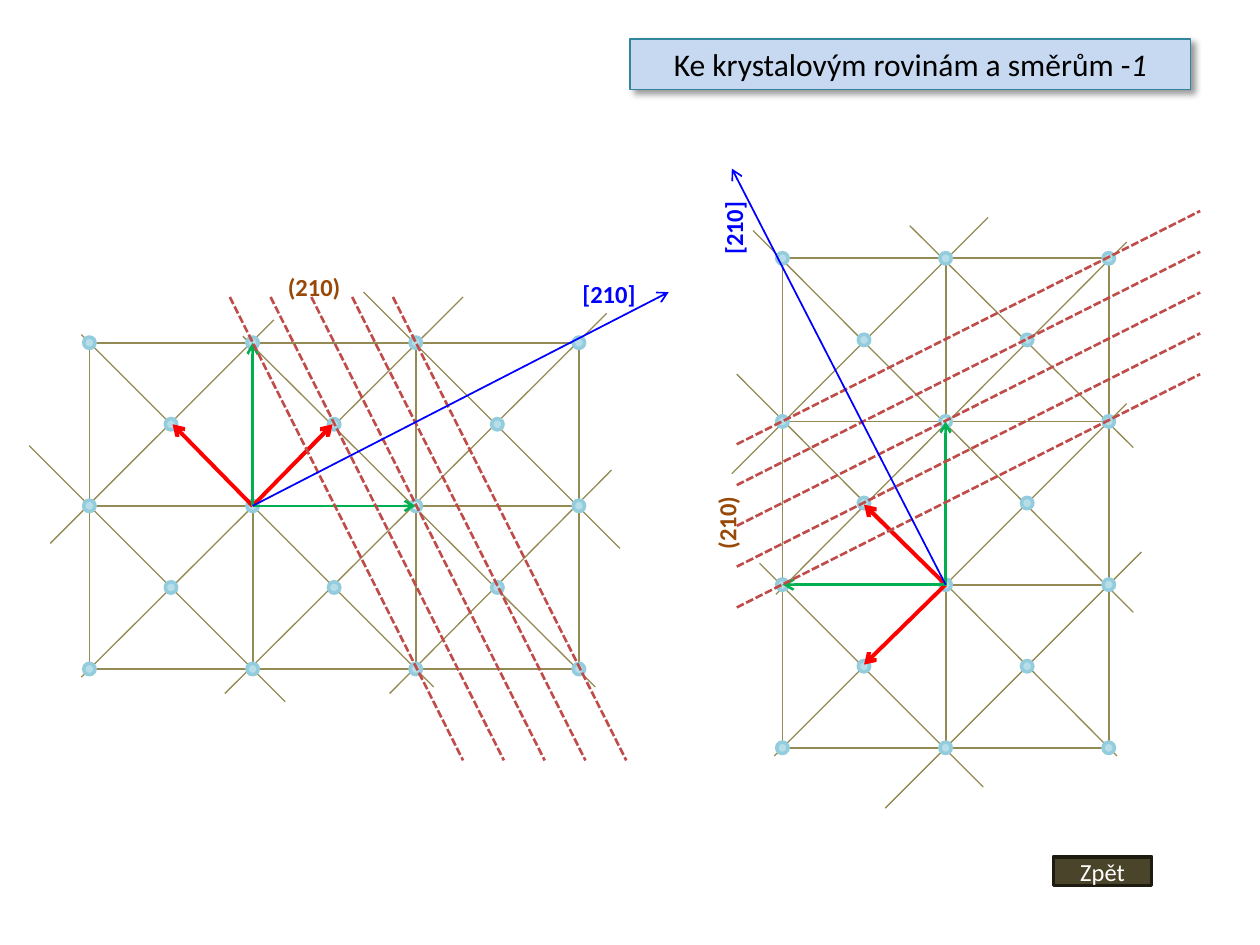
from itertools import product

from lxml.etree import SubElement
from pptx import Presentation
from pptx.dml.color import RGBColor
from pptx.enum.dml import MSO_LINE
from pptx.enum.shapes import MSO_CONNECTOR, MSO_SHAPE
from pptx.enum.text import MSO_ANCHOR, MSO_AUTO_SIZE, PP_ALIGN
from pptx.oxml.ns import qn
from pptx.util import Inches, Pt

OLIVE = RGBColor(0x94, 0x8A, 0x54)
ATOM_FILL = RGBColor(0xB7, 0xDE, 0xE8)
ATOM_PALE = RGBColor(0xDB, 0xEE, 0xF4)
ATOM_EDGE = RGBColor(0x93, 0xCD, 0xDD)
RED = RGBColor(0xFF, 0x00, 0x00)
GREEN = RGBColor(0x00, 0xB0, 0x50)
PLANE_RED = RGBColor(0xBF, 0x4C, 0x48)
BLUE = RGBColor(0x00, 0x00, 0xFF)
BROWN = RGBColor(0x98, 0x48, 0x07)
BUTTON_FILL = RGBColor(0x4A, 0x45, 0x2A)
BUTTON_EDGE = RGBColor(0x1E, 0x1C, 0x11)
TITLE_FILL = RGBColor(0xC6, 0xD9, 0xF1)
TITLE_EDGE = RGBColor(0x31, 0x85, 0x9C)
BLACK = RGBColor(0x00, 0x00, 0x00)
WHITE = RGBColor(0xFF, 0xFF, 0xFF)

GRID = Inches(0.1)
COLUMNS, ROWS = 100, 75
CELLS_LONG, CELLS_SHORT = 3, 2
ATOM_SIZE = 0.07

DIAGONALS = [
    ((-0.05, -0.05), (2.11, 2.11)),
    ((0.94, -0.04), (3.1, 2.11)),
    ((-0.37, 0.63), (1.2, 2.2)),
    ((1.68, -0.31), (3.25, 1.26)),
    ((-0.05, 2.05), (2.29, -0.28)),
    ((0.83, 2.15), (3.17, -0.18)),
    ((1.84, 2.15), (3.2, 0.78)),
    ((-0.24, 1.23), (1.13, -0.14)),
]
ORIGIN = (1, 1)
VECTORS = [
    ((0.51, 0.5), RED, 2.25),
    ((1.49, 0.5), RED, 2.25),
    ((1, 0), GREEN, 1.5),
    ((2, 1), GREEN, 1.5),
]
PLANE_START, PLANE_STEP, PLANE_RUN = 0.86, 0.25, 1.43
PLANE_TOP, PLANE_BOTTOM, PLANE_COUNT = -0.28, 2.56, 5
DIRECTION_END = (3.55, -0.31)
LABELS = [
    ("(210)", (1.44, -0.34), 0.6, BROWN),
    ("[210]", (3.2, -0.3), 0.51, BLUE),
]
LABEL_HEIGHT = 0.26


def apply_format(target, values):
    for name, value in values.items():
        setattr(target, name, value)


def style_shape(shape, fill, edge, width):
    shape.shadow.inherit = False
    if fill is None:
        shape.fill.background()
    else:
        shape.fill.solid()
        shape.fill.fore_color.rgb = fill
    shape.line.color.rgb = edge
    shape.line.width = Pt(width)


def write_run(paragraph, text, size, color, **extra):
    run = paragraph.add_run()
    run.text = text
    apply_format(run.font, {"name": "Calibri", "size": Pt(size), **extra})
    run.font.color.rgb = color


def add_line(shapes, start, end, color, width, dash=None, arrow=False):
    connector = shapes.add_connector(MSO_CONNECTOR.STRAIGHT, *start, *end)
    connector.line.color.rgb = color
    apply_format(connector.line, {"width": Pt(width), "dash_style": dash})
    properties = connector._element.spPr
    if arrow:
        SubElement(properties.find(qn("a:ln")), qn("a:tailEnd"), type="arrow")
    SubElement(properties, qn("a:effectLst"))


def draw_lattice(slide, box, turned):
    left, top, width, height = box
    cell = (height if turned else width) / CELLS_LONG
    rotation = 270 if turned else 0
    shapes = slide.shapes.add_group_shape().shapes

    def point(position):
        along, across = position
        if turned:
            return round(left + across * cell), round(top + height - along * cell)
        return round(left + along * cell), round(top + across * cell)

    def centred(position, columns, rows):
        x, y = point(position)
        w, h = round(columns * cell), round(rows * cell)
        return x - w // 2, y - h // 2, w, h

    corners = list(product(range(CELLS_LONG + 1), range(CELLS_SHORT + 1)))
    centres = [(along + 0.5, across + 0.5)
               for along, across in product(range(CELLS_LONG), range(CELLS_SHORT))]

    for centre in centres:
        tile = shapes.add_shape(MSO_SHAPE.RECTANGLE, *centred(centre, 1, 1))
        tile.rotation = rotation
        style_shape(tile, None, OLIVE, 1)

    for start, end in DIAGONALS:
        add_line(shapes, point(start), point(end), OLIVE, 0.75)

    for position in corners + centres:
        atom = shapes.add_shape(MSO_SHAPE.OVAL, *centred(position, ATOM_SIZE, ATOM_SIZE))
        atom.rotation = rotation
        style_shape(atom, ATOM_PALE if position == (2, 1) else ATOM_FILL, ATOM_EDGE, 2)

    for end, color, weight in VECTORS:
        add_line(shapes, point(ORIGIN), point(end), color, weight, arrow=True)

    for index in range(PLANE_COUNT):
        along = PLANE_START + index * PLANE_STEP
        add_line(shapes, point((along, PLANE_TOP)), point((along + PLANE_RUN, PLANE_BOTTOM)),
                 PLANE_RED, 1.5, dash=MSO_LINE.SQUARE_DOT)

    add_line(shapes, point(ORIGIN), point(DIRECTION_END), BLUE, 1, arrow=True)

    for text, position, columns, color in LABELS:
        label = shapes.add_textbox(*centred(position, columns, LABEL_HEIGHT))
        label.rotation = rotation
        apply_format(label.text_frame, {"word_wrap": True,
                                        "auto_size": MSO_AUTO_SIZE.SHAPE_TO_FIT_TEXT})
        write_run(label.text_frame.paragraphs[0], text, 14, color, bold=True)


def draw_panel(slide, box, kind, colors, width, runs):
    panel = slide.shapes.add_shape(kind, *box)
    style_shape(panel, *colors, width)
    apply_format(panel.text_frame, {"word_wrap": True, "vertical_anchor": MSO_ANCHOR.MIDDLE})
    paragraph = panel.text_frame.paragraphs[0]
    paragraph.alignment = PP_ALIGN.CENTER
    for text, size, color, extra in runs:
        write_run(paragraph, text, size, color, **extra)
    return panel


def draw_title(slide, box):
    title = draw_panel(slide, box, MSO_SHAPE.RECTANGLE, (TITLE_FILL, TITLE_EDGE), 0.75,
                       [("Ke krystalovým rovinám a směrům -", 18, BLACK, {}),
                        ("1", 18, BLACK, {"italic": True})])
    effects = title._element.spPr.find(qn("a:effectLst"))
    shadow = SubElement(effects, qn("a:outerShdw"), blurRad=str(Pt(4)), dist=str(Pt(3)),
                        dir=str(45 * 60000), algn="tl", rotWithShape="0")
    color = SubElement(shadow, qn("a:srgbClr"), val=str(BLACK))
    SubElement(color, qn("a:alpha"), val="40000")


def draw_button(slide, box):
    draw_panel(slide, box, MSO_SHAPE.ACTION_BUTTON_CUSTOM, (BUTTON_FILL, BUTTON_EDGE), 2,
               [("Zpět", 14, WHITE, {})])


def grid_box(*cells):
    return [round(count * GRID) for count in cells]


def main():
    presentation = Presentation()
    apply_format(presentation, {"slide_width": COLUMNS * GRID, "slide_height": ROWS * GRID})
    slide = presentation.slides.add_slide(presentation.slide_layouts[6])
    draw_lattice(slide, grid_box(7.1, 27.2, 38.85, 25.9), turned=False)
    draw_lattice(slide, grid_box(62.1, 20.5, 25.9, 38.85), turned=True)
    draw_button(slide, grid_box(83.6, 68, 7.8, 2.3))
    draw_title(slide, grid_box(50, 3.1, 44.5, 4))
    presentation.save("out.pptx")


if __name__ == "__main__":
    main()
